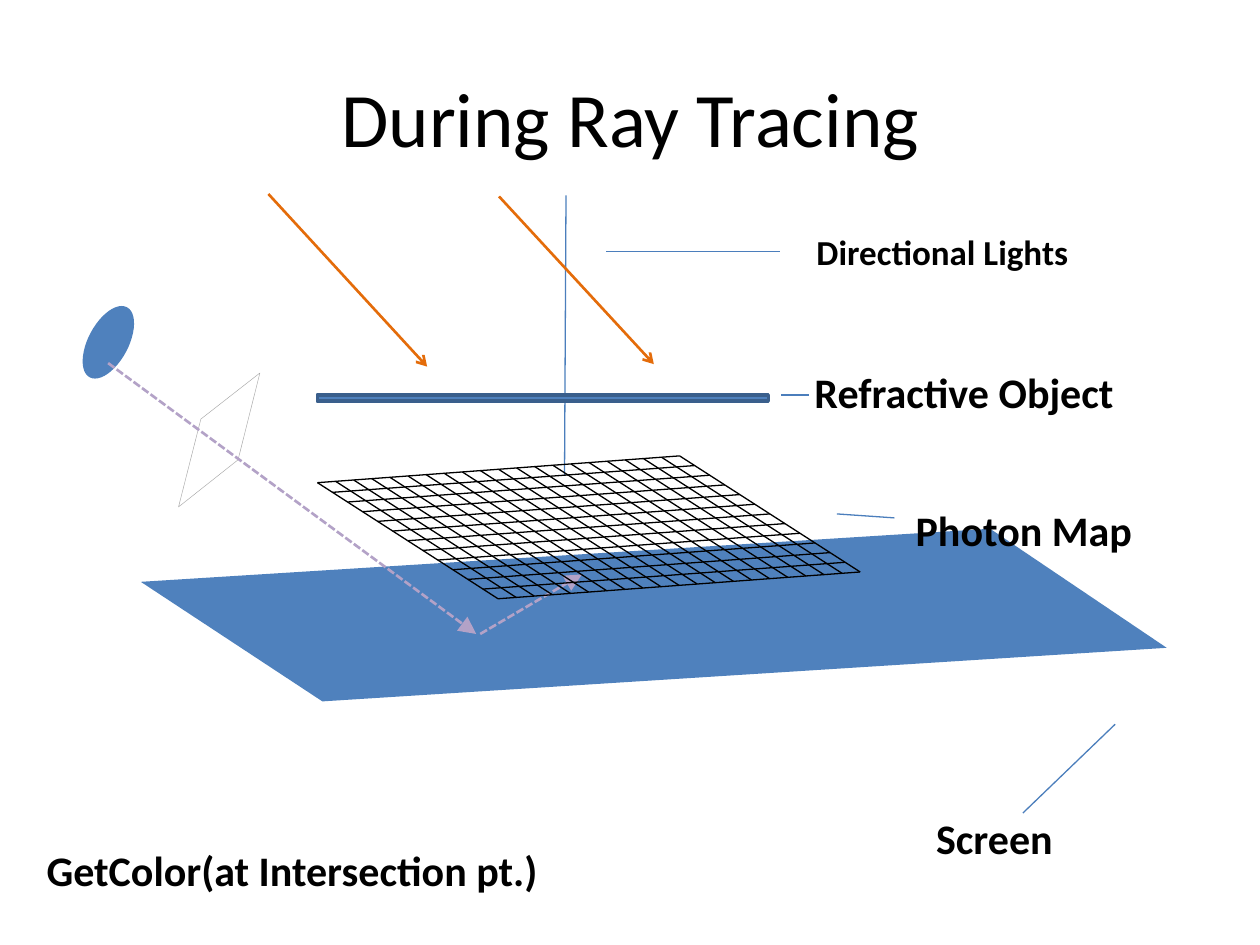
from lxml import etree
from pptx import Presentation
from pptx.dml.color import RGBColor
from pptx.enum.dml import MSO_LINE
from pptx.enum.shapes import MSO_CONNECTOR, MSO_SHAPE
from pptx.enum.text import MSO_ANCHOR, PP_ALIGN
from pptx.oxml.ns import qn
from pptx.util import Cm, Pt

STRAIGHT = MSO_CONNECTOR.STRAIGHT
RECTANGLE, OVAL = MSO_SHAPE.RECTANGLE, MSO_SHAPE.OVAL
DASH = MSO_LINE.SQUARE_DOT
TOP, MIDDLE = MSO_ANCHOR.TOP, MSO_ANCHOR.MIDDLE
LEFT, CENTER = PP_ALIGN.LEFT, PP_ALIGN.CENTER

BLUE, EDGE, THIN = "4F81BD", "3A5F8C", "4B7EBC"
ORANGE, LILAC, BLACK, WHITE, GREY = "E46C0A", "B3A2C7", "000000", "FFFFFF", "A6A6A6"

# Content, all lengths in centimetres
TITLE = ("During Ray Tracing", (1.28, 0.76, 22.86, 3.18))
LABELS = [  # text, box, size, wrap
    ("GetColor(at Intersection pt.)", (0.69, 16.9, 12.24, 1.27), 24, True),
    ("Refractive Object", (16.17, 7.27, 8.89, 1.27), 24, True),
    ("Photon Map", (18.21, 10.04, 5.44, 1.27), 24, True),
    ("Screen", (18.62, 16.26, 6.5, 1.27), 24, True),
    ("Directional Lights", (16.21, 4.52, 5.79, 1.12), 20, False),
]
AXIS = ((11.41, 3.94), (11.38, 9.58))
LEADERS = [
    ((15.75, 7.96), (16.31, 7.96)),
    ((16.87, 10.36), (18.03, 10.44)),
    ((20.62, 16.39), (22.48, 14.6)),
    ((12.22, 5.07), (15.72, 5.07)),
]
LIGHTS = [((5.41, 3.91), (8.61, 7.39)), ((10.06, 3.96), (13.18, 7.34))]
EYE_RAYS = [((2.18, 7.32), (9.6, 12.78)), ((9.68, 12.78), (11.73, 11.58))]
REFRACTIVE_BAR = (6.4, 7.96, 9.09, 0.13)
EYE = (1.78, 6.1, 0.81, 1.6)
EYE_TILT = 28
SCREEN = [(2.84, 11.73), (19.96, 10.66), (23.52, 13.06), (6.5, 14.14)]
WINDOW = [(4.05, 8.45), (5.24, 7.52), (4.8, 9.27), (3.6, 10.22)]

# Photon map: 2 x 2 slanted tiles, each divided into rows and columns
MAP_ORIGIN = (6.4, 9.73)
TILE_ACROSS, TILE_DOWN = (3.65, -0.27), (1.82, 1.17)
TILES, ROWS, COLUMNS = 2, 6, 10


def color(value):
    return RGBColor.from_string(value)


def set_all(target, values):
    for name, value in values.items():
        setattr(target, name, value)


def add_text(page, text, place, size, bold=False, wrap=True, align=LEFT, anchor=TOP):
    box = page.shapes.add_textbox(*map(Cm, place))
    set_all(box.text_frame, {"word_wrap": wrap, "vertical_anchor": anchor})
    para = box.text_frame.paragraphs[0]
    para.alignment = align
    span = para.add_run()
    span.text = text
    set_all(span.font, {"name": "Calibri", "size": Pt(size), "bold": bold})
    span.font.color.rgb = color(BLACK)


def add_line(shapes, ends, stroke, width=0.75, dash=None, head=None):
    (x1, y1), (x2, y2) = ends
    line = shapes.add_connector(STRAIGHT, Cm(x1), Cm(y1), Cm(x2), Cm(y2))
    line.line.color.rgb = color(stroke)
    set_all(line.line, {"width": Pt(width), "dash_style": dash})
    if head:
        etree.SubElement(line.line._get_or_add_ln(), qn("a:tailEnd"), head)
    etree.SubElement(line._element.spPr, qn("a:effectLst"))


def paint(shape, fill, stroke=None, width=0):
    shape.shadow.inherit = False
    shape.fill.solid()
    shape.fill.fore_color.rgb = color(fill)
    if stroke:
        shape.line.color.rgb = color(stroke)
        shape.line.width = Pt(width)
    else:
        shape.line.fill.background()


def add_polygon(page, points):
    start, *rest = [(Cm(x), Cm(y)) for x, y in points]
    outline = page.shapes.build_freeform(*start)
    outline.add_line_segments(rest, close=True)
    return outline.convert_to_shape()


def map_point(across, down):
    return tuple(start + across * a + down * d
                 for start, a, d in zip(MAP_ORIGIN, TILE_ACROSS, TILE_DOWN))


def add_photon_map(page):
    # Neighbouring tiles share their border, so each border is drawn once
    grid = page.shapes.add_group_shape()
    for tile in range(TILES):
        for row in range(TILES * ROWS + 1):
            y = row / ROWS
            add_line(grid.shapes, (map_point(tile, y), map_point(tile + 1, y)), BLACK)
        for column in range(TILES * COLUMNS + 1):
            x = column / COLUMNS
            add_line(grid.shapes, (map_point(x, tile), map_point(x, tile + 1)), BLACK)


def main():
    deck = Presentation()
    set_all(deck, {"slide_width": Cm(25.4), "slide_height": Cm(19.05)})
    page = deck.slides.add_slide(deck.slide_layouts[6])

    # Scene, from back to front
    add_line(page.shapes, AXIS, THIN)
    add_text(page, *TITLE, 44, align=CENTER, anchor=MIDDLE)
    bar = page.shapes.add_shape(RECTANGLE, *map(Cm, REFRACTIVE_BAR))
    paint(bar, BLUE, EDGE, 2)
    paint(add_polygon(page, SCREEN), BLUE)
    eye = page.shapes.add_shape(OVAL, *map(Cm, EYE))
    eye.rotation = EYE_TILT
    paint(eye, BLUE)
    paint(add_polygon(page, WINDOW), WHITE, GREY, 0.25)
    for ray in EYE_RAYS:
        add_line(page.shapes, ray, LILAC, 1.5, DASH,
                 {"type": "triangle", "w": "lg", "len": "lg"})

    # Labels with their leader lines
    for text, place, size, wrap in LABELS:
        add_text(page, text, place, size, bold=True, wrap=wrap)
    for leader in LEADERS:
        add_line(page.shapes, leader, THIN)

    # Lights and photon map
    for light in LIGHTS:
        add_line(page.shapes, light, ORANGE, 1.5, head={"type": "arrow"})
    add_photon_map(page)

    deck.save("out.pptx")


if __name__ == "__main__":
    main()
